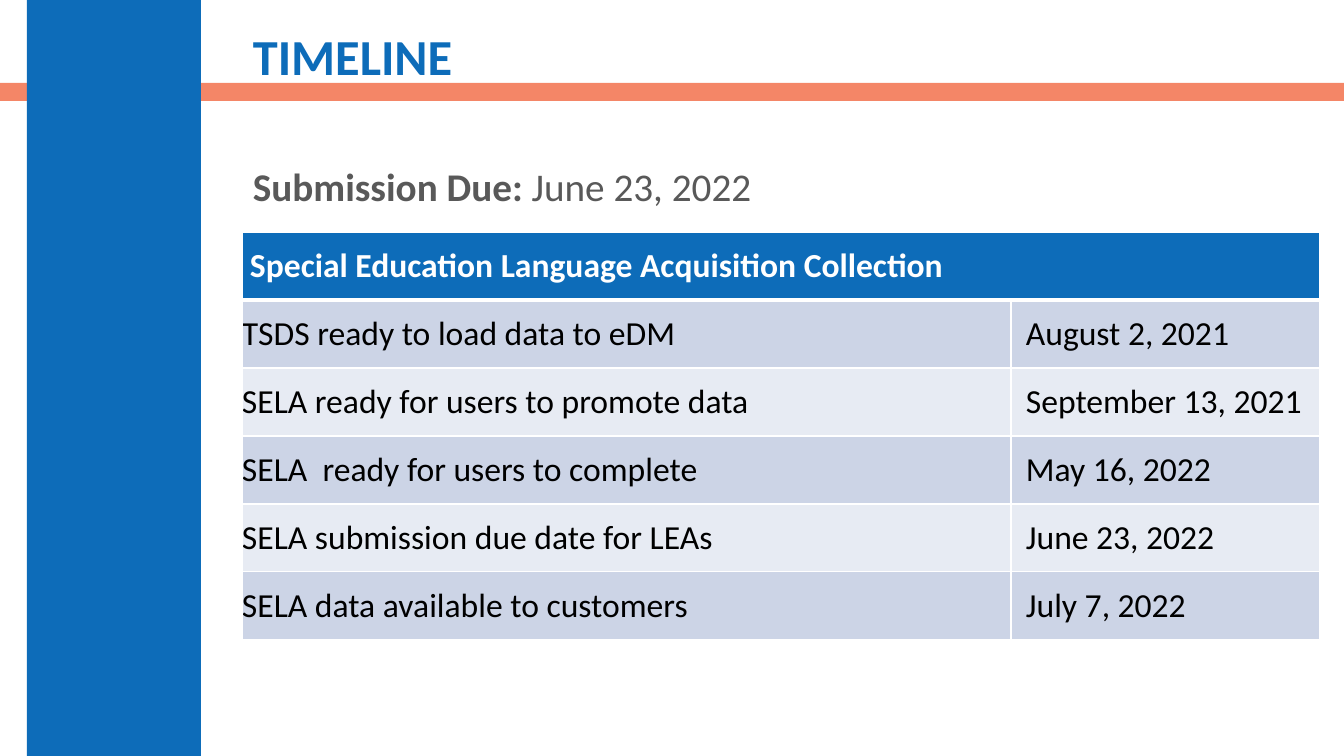
from lxml.etree import SubElement
from pptx import Presentation
from pptx.dml.color import RGBColor
from pptx.enum.shapes import MSO_SHAPE
from pptx.enum.text import MSO_ANCHOR
from pptx.oxml.ns import qn
from pptx.util import Pt

TITLE = "TIMELINE"
DUE = [("Submission Due: ", True), ("June 23, 2022", False)]
HEADER = "Special Education Language Acquisition Collection"
MILESTONES = [
    ("TSDS ready to load data to eDM", "August 2, 2021"),
    ("SELA ready for users to promote data", "September 13, 2021"),
    ("SELA  ready for users to complete", "May 16, 2022"),
    ("SELA submission due date for LEAs", "June 23, 2022"),
    ("SELA data available to customers", "July 7, 2022"),
]
COLORS = {"blue": "0D6CB9", "coral": "F16038", "gray": "595959", "white": "FFFFFF",
          "black": "000000", "band1": "CCD4E6", "band2": "E7EBF3"}
FONT = "Calibri"
SLIDE_W, SLIDE_H = 1344, 756
COLUMNS = (769, 309)
ROW_H = 68
HEADER_INDENT, DATE_INDENT = 8, 15


def px(n):
    return round(n * 914400 / 100.8)


def rgb(name):
    return RGBColor.from_string(COLORS[name])


def add_run(p, text, size, color, bold=False):
    r = p.add_run()
    r.text = text
    r.font.name, r.font.size, r.font.bold = FONT, Pt(size), bold
    r.font.color.rgb = rgb(color)


def add_bar(s, box, color):
    bar = s.shapes.add_shape(MSO_SHAPE.RECTANGLE, *map(px, box))
    bar.shadow.inherit = False
    bar.fill.solid()
    bar.fill.fore_color.rgb = rgb(color)
    bar.line.fill.background()
    return bar


def add_text(s, box, anchor, runs, size, color):
    tf = s.shapes.add_textbox(*map(px, box)).text_frame
    tf.word_wrap = True
    tf.vertical_anchor = anchor
    p = tf.paragraphs[0]
    p.line_spacing = 0.9
    for text, bold in runs:
        add_run(p, text, size, color, bold)


def set_borders(cell, widths):
    """Draw white borders; widths are points for left, right, top, bottom."""
    tcPr = cell._tc.get_or_add_tcPr()
    for side, width in zip("LRTB", widths):
        ln = SubElement(tcPr, qn(f"a:ln{side}"), w=str(Pt(width)))
        fill = SubElement(ln, qn("a:solidFill"))
        SubElement(fill, qn("a:srgbClr"), val=COLORS["white"])


def fill_cell(cell, text, indent, fill, color, bold):
    cell.margin_left = px(indent)
    cell.margin_right = cell.margin_top = cell.margin_bottom = 0
    cell.vertical_anchor = MSO_ANCHOR.MIDDLE
    cell.fill.solid()
    cell.fill.fore_color.rgb = rgb(fill)
    if text:
        add_run(cell.text_frame.paragraphs[0], text, 24, color, bold)


def add_timeline(s):
    rows = [(HEADER, "")] + MILESTONES
    frame = s.shapes.add_table(len(rows), len(COLUMNS), px(242), px(232),
                               px(sum(COLUMNS)), px(ROW_H * len(rows)))
    table = frame.table
    for column, width in zip(table.columns, COLUMNS):
        column.width = px(width)
    for i, texts in enumerate(rows):
        table.rows[i].height = px(ROW_H)
        head = i == 0
        fill = "blue" if head else "band1" if i % 2 else "band2"
        color = "white" if head else "black"
        indents = (HEADER_INDENT if head else 0, DATE_INDENT)
        for j, (text, indent) in enumerate(zip(texts, indents)):
            cell = table.cell(i, j)
            set_borders(cell, (1, 1, 3 if i == 1 else 1, 3 if head else 1))
            fill_cell(cell, text, indent, fill, color, head)
    table.cell(0, 0).merge(table.cell(0, 1))


def main():
    prs = Presentation()
    prs.slide_width, prs.slide_height = px(SLIDE_W), px(SLIDE_H)
    s = prs.slides.add_slide(prs.slide_layouts[6])
    stripe = add_bar(s, (0, 83, SLIDE_W, 18), "coral")
    color = stripe.fill._xPr.find(qn("a:solidFill"))[0]
    SubElement(color, qn("a:alpha"), val="76000")
    add_bar(s, (27, 0, 174, SLIDE_H), "blue")
    add_text(s, (243, 18, 1061, 83), MSO_ANCHOR.MIDDLE, [(TITLE, True)], 36, "blue")
    add_text(s, (243, 163, 991, 60), MSO_ANCHOR.TOP, DUE, 28, "gray")
    add_timeline(s)
    prs.save("out.pptx")


if __name__ == "__main__":
    main()
